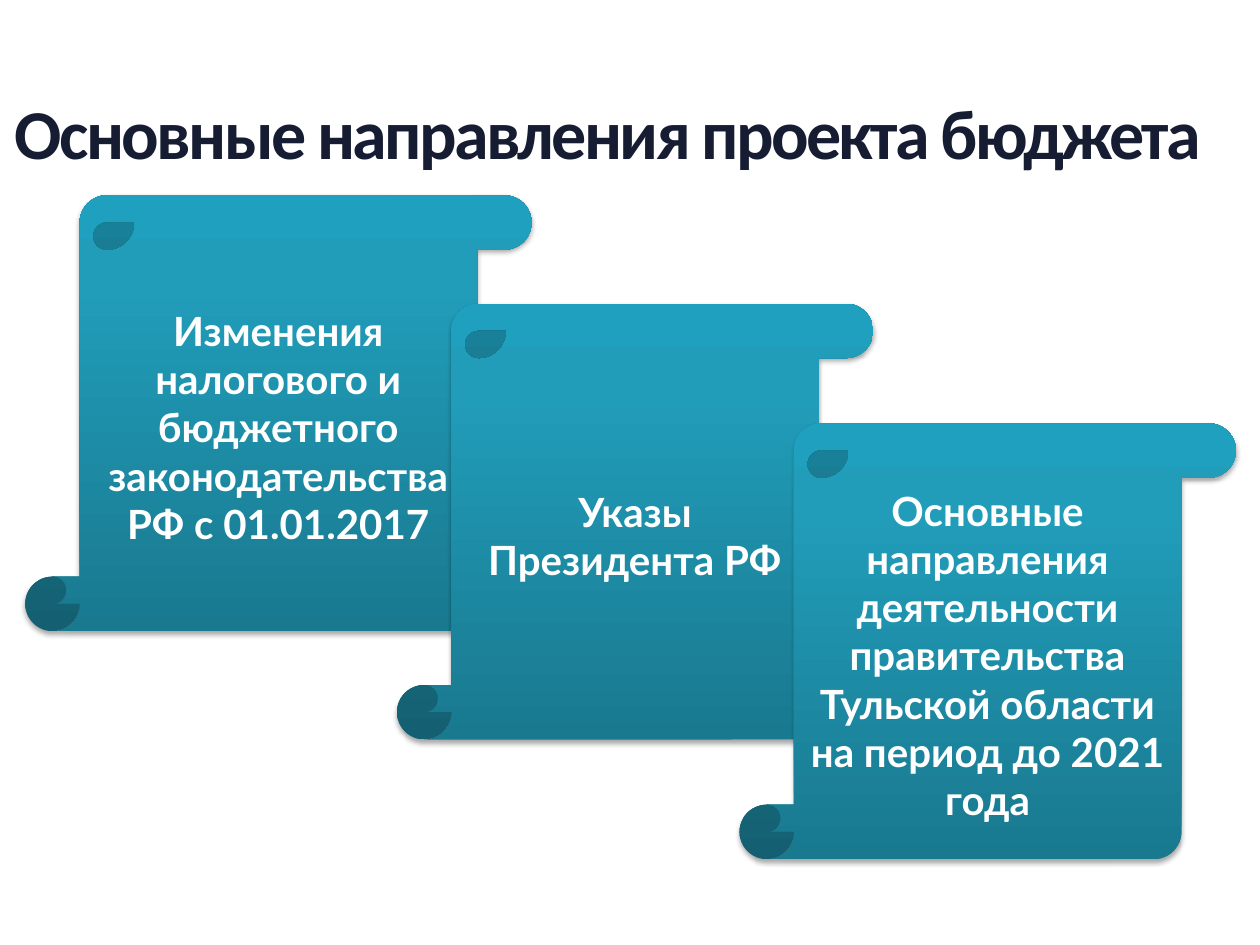
"""Build a slide with three cascading scrolls naming the bases of the budget draft."""
from dataclasses import dataclass

from lxml.etree import SubElement
from pptx import Presentation
from pptx.dml.color import RGBColor
from pptx.enum.shapes import MSO_SHAPE
from pptx.enum.text import MSO_ANCHOR, PP_ALIGN
from pptx.oxml.ns import qn
from pptx.util import Pt


@dataclass(frozen=True)
class Theme:
    title_font: str = "Calibri"
    title_size: float = 40
    title_color: str = "161D32"
    title_spacing: float = -1.5
    scroll_font: str = "Lato"
    scroll_size: float = 23
    scroll_color: str = "FFFFFF"
    gradient: tuple = ((0, "19798F"), (80, "219DBA"), (100, "1EA0BE"))
    gradient_angle: float = 90
    shadow_color: str = "000000"
    shadow_opacity: int = 35
    shadow_blur: float = 3.1
    shadow_distance: float = 1.8
    shadow_angle: int = 90


@dataclass(frozen=True)
class Scroll:
    left: float
    top: float
    width: float
    text: str


THEME = Theme()
SCROLL_HEIGHT = 249.1
SCROLLS = (
    Scroll(14.4, 111.6, 289.4, "Изменения налогового и бюджетного законодательства РФ с 01.01.2017"),
    Scroll(226.8, 173.5, 272.2, "Указы Президента РФ"),
    Scroll(422.6, 241.9, 283.7,
           "Основные направления деятельности правительства Тульской области на период до 2021 года"),
)


def add_span(para, text: str, font: str, size: float, color: str):
    span = para.add_run()
    span.text = text
    span.font.name = font
    span.font.size = Pt(size)
    span.font.bold = True
    span.font.color.rgb = RGBColor.from_string(color)
    return span


def add_title(page, text: str) -> None:
    box = page.shapes.add_textbox(Pt(8.6), Pt(51.1), Pt(708.5), Pt(54.7))
    frame = box.text_frame
    frame.word_wrap = True
    frame.vertical_anchor = MSO_ANCHOR.MIDDLE
    frame.margin_left = frame.margin_right = frame.margin_top = frame.margin_bottom = Pt(0)
    para = frame.paragraphs[0]
    para.line_spacing = 0.9
    span = add_span(para, text, THEME.title_font, THEME.title_size, THEME.title_color)
    span.font._element.set("spc", str(int(THEME.title_spacing * 100)))


def apply_gradient(shape) -> None:
    shape.fill.gradient()
    shape.fill.gradient_angle = THEME.gradient_angle
    stops = shape._element.spPr.find(qn("a:gradFill")).find(qn("a:gsLst"))
    for stop in list(stops):
        stops.remove(stop)
    for position, color in THEME.gradient:
        stop = SubElement(stops, qn("a:gs"), pos=str(position * 1000))
        SubElement(stop, qn("a:srgbClr"), val=color)


def apply_shadow(shape) -> None:
    shape.shadow.inherit = False
    effects = shape._element.spPr.find(qn("a:effectLst"))
    shadow = SubElement(
        effects, qn("a:outerShdw"),
        blurRad=str(Pt(THEME.shadow_blur)), dist=str(Pt(THEME.shadow_distance)),
        dir=str(THEME.shadow_angle * 60000), rotWithShape="0",
    )
    color = SubElement(shadow, qn("a:srgbClr"), val=THEME.shadow_color)
    SubElement(color, qn("a:alpha"), val=str(THEME.shadow_opacity * 1000))


def add_scroll(page, scroll: Scroll) -> None:
    shape = page.shapes.add_shape(
        MSO_SHAPE.VERTICAL_SCROLL,
        Pt(scroll.left), Pt(scroll.top), Pt(scroll.width), Pt(SCROLL_HEIGHT),
    )
    apply_gradient(shape)
    shape.line.fill.background()
    apply_shadow(shape)
    frame = shape.text_frame
    frame.word_wrap = True
    frame.vertical_anchor = MSO_ANCHOR.MIDDLE
    para = frame.paragraphs[0]
    para.alignment = PP_ALIGN.CENTER
    add_span(para, scroll.text, THEME.scroll_font, THEME.scroll_size, THEME.scroll_color)


def main() -> None:
    deck = Presentation()
    deck.slide_width, deck.slide_height = Pt(720), Pt(540)
    page = deck.slides.add_slide(deck.slide_layouts[6])
    add_title(page, "Основные направления проекта бюджета")
    for scroll in SCROLLS:
        add_scroll(page, scroll)
    deck.save("out.pptx")


if __name__ == "__main__":
    main()
